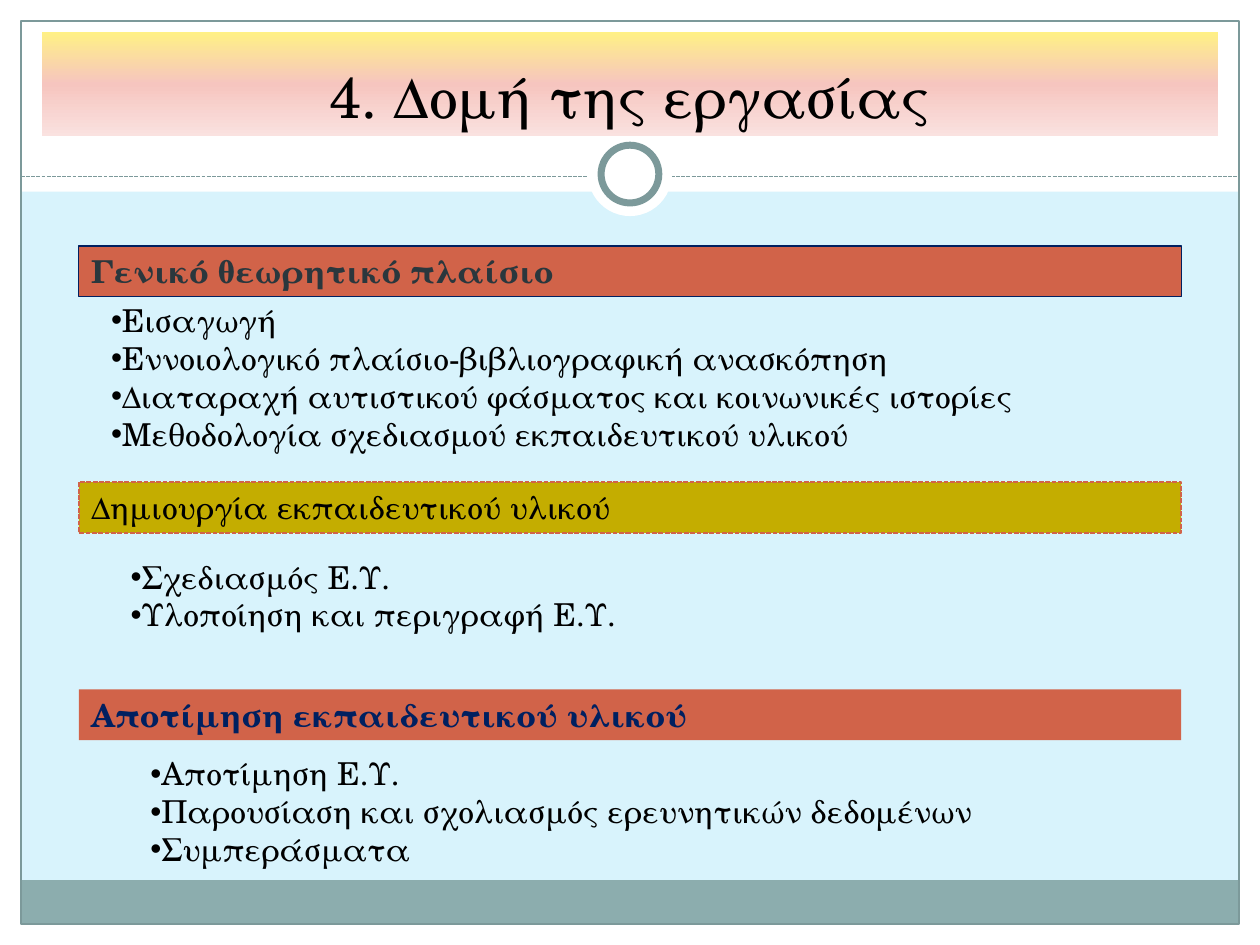
import copy
from dataclasses import dataclass
from typing import Any, NamedTuple, Optional

import pptx
import pptx.dml.color
import pptx.enum.dml
import pptx.enum.shapes
import pptx.enum.text
import pptx.oxml
import pptx.oxml.ns
import pptx.util

Pt = pptx.util.Pt
SHAPES = pptx.enum.shapes.MSO_SHAPE
ANCHOR = pptx.enum.text.MSO_ANCHOR
ALIGN = pptx.enum.text.PP_ALIGN
FIT = pptx.enum.text.MSO_AUTO_SIZE
DASH = pptx.enum.dml.MSO_LINE.SQUARE_DOT


@dataclass(frozen=True)
class Theme:
    font: str = "TeX Gyre Schola"
    title_size: float = 33
    text_size: float = 18
    background: str = "D8F3FC"
    white: str = "FFFFFF"
    black: str = "000000"
    footer: str = "8CADAE"
    trim: str = "7C999A"
    rust: str = "D16349"
    gold: str = "C4AD00"
    navy: str = "002060"
    slate: str = "2A373D"
    green: str = "648C61"
    gradient: tuple = ((0, "FFF185"), (0.5, "F6C5BF"), (1, "FAE2E0"))


THEME = Theme()


class Box(NamedTuple):
    left: float
    top: float
    width: float
    height: float


class Stroke(NamedTuple):
    color: str
    width: float
    dash: Any = None
    alpha: int = 100


class Panel(NamedTuple):
    box: Box
    fill: Optional[str] = None
    stroke: Optional[Stroke] = None
    kind: Any = SHAPES.RECTANGLE


class Section(NamedTuple):
    heading: str
    top: float
    fill: str
    color: str
    bold: bool
    stroke: Optional[Stroke]
    outline: Optional[Stroke]
    list_box: Box
    items: tuple


PANELS = (
    Panel(Box(0, 528, 720, 12), THEME.white),
    Panel(Box(0, 0, 720, 109.5), THEME.white),
    Panel(Box(0, 0, 12, 540), THEME.white),
    Panel(Box(708, 0, 12, 540), THEME.white),
    Panel(Box(12, 503, 696, 25), THEME.footer),
    Panel(Box(12, 12, 696, 516), None, Stroke(THEME.trim, 0.75)),
)
RINGS = (
    Panel(Box(336, 75.5, 48, 48), THEME.white, None, SHAPES.OVAL),
    Panel(Box(343.5, 83, 33, 33), THEME.white, Stroke(THEME.trim, 4), SHAPES.OVAL),
)
SECTIONS = (
    Section("Γενικό θεωρητικό πλαίσιο", 140.5, THEME.rust, THEME.slate, True,
            Stroke(THEME.navy, 0.75), Stroke(THEME.green, 0.07, alpha=55),
            Box(56.25, 168.5, 585, 94),
            ("Εισαγωγή",
             "Εννοιολογικό πλαίσιο-βιβλιογραφική ανασκόπηση",
             "Διαταραχή αυτιστικού φάσματος και κοινωνικές ιστορίες",
             "Μεθοδολογία σχεδιασμού εκπαιδευτικού υλικού")),
    Section("Δημιουργία εκπαιδευτικού υλικού", 275.5, THEME.gold, THEME.black, False,
            Stroke(THEME.rust, 0.9, DASH), Stroke(THEME.rust, 0.8),
            Box(67.5, 315, 574, 51),
            ("Σχεδιασμός Ε.Υ.", "Υλοποίηση και περιγραφή Ε.Υ.")),
    Section("Αποτίμηση εκπαιδευτικού υλικού", 394, THEME.rust, THEME.navy, True,
            None, None,
            Box(78.75, 427.5, 580, 73),
            ("Αποτίμηση Ε.Υ.",
             "Παρουσίαση και σχολιασμός ερευνητικών δεδομένων",
             "Συμπεράσματα")),
)


def rgb(value: str) -> pptx.dml.color.RGBColor:
    return pptx.dml.color.RGBColor.from_string(value)


def apply_stroke(line: Any, stroke: Optional[Stroke]) -> None:
    if stroke is None:
        line.fill.background()
        return
    line.color.rgb = rgb(stroke.color)
    line.width = Pt(stroke.width)
    if stroke.dash is not None:
        line.dash_style = stroke.dash


def draw_panel(page: Any, panel: Panel) -> Any:
    shape = page.shapes.add_shape(panel.kind, *map(Pt, panel.box))
    shape.shadow.inherit = False
    if panel.fill is None:
        shape.fill.background()
    else:
        shape.fill.solid()
        shape.fill.fore_color.rgb = rgb(panel.fill)
    apply_stroke(shape.line, panel.stroke)
    return shape


def draw_rule(page: Any, left: float, right: float, top: float, stroke: Stroke) -> None:
    rule = page.shapes.add_connector(
        pptx.enum.shapes.MSO_CONNECTOR.STRAIGHT, Pt(left), Pt(top), Pt(right), Pt(top))
    apply_stroke(rule.line, stroke)
    rule.element.spPr.append(pptx.oxml.parse_xml(
        f'<a:effectLst {pptx.oxml.ns.nsdecls("a")}/>'))


def place_on_top(shape: Any, box: Box) -> None:
    shape.left, shape.top, shape.width, shape.height = map(Pt, box)
    shape.element.getparent().append(shape.element)


def add_bullet(para: Any) -> None:
    properties = para._p.get_or_add_pPr()
    properties.set("marL", "0")
    properties.set("indent", "0")
    properties.append(pptx.oxml.parse_xml(
        f'<a:buChar {pptx.oxml.ns.nsdecls("a")} char="•"/>'))


def outline_text(span: Any, stroke: Stroke) -> None:
    span._r.get_or_add_rPr().insert(0, pptx.oxml.parse_xml(
        f'<a:ln {pptx.oxml.ns.nsdecls("a")} w="{int(Pt(stroke.width))}"><a:solidFill>'
        f'<a:srgbClr val="{stroke.color}"><a:alpha val="{stroke.alpha * 1000}"/></a:srgbClr>'
        '</a:solidFill><a:prstDash val="solid"/></a:ln>'))


def write_text(shape: Any, *lines: str, size: float = THEME.text_size,
               color: str = THEME.black, bold: bool = False, align: Any = ALIGN.LEFT,
               anchor: Any = ANCHOR.TOP, fit: Any = FIT.SHAPE_TO_FIT_TEXT,
               bullets: bool = False, outline: Optional[Stroke] = None) -> None:
    frame = shape.text_frame
    frame.word_wrap = True
    frame.auto_size = fit
    frame.vertical_anchor = anchor
    for index, line in enumerate(lines):
        para = frame.add_paragraph() if index else frame.paragraphs[0]
        para.alignment = align
        para.line_spacing = 1.0
        para.space_before = para.space_after = Pt(0)
        if bullets:
            add_bullet(para)
        span = para.add_run()
        span.text = line
        span.font.name = THEME.font
        span.font.size = Pt(size)
        span.font.bold = bold
        span.font.color.rgb = rgb(color)
        if outline is not None:
            outline_text(span, outline)


def fill_gradient(shape: Any) -> None:
    shape.fill.gradient()
    shape.fill.gradient_angle = 270
    stop_list = shape.element.spPr.find(".//" + pptx.oxml.ns.qn("a:gsLst"))
    stop_list.insert(1, copy.deepcopy(stop_list[0]))
    for stop, (position, color) in zip(shape.fill.gradient_stops, THEME.gradient):
        stop.position = position
        stop.color.rgb = rgb(color)


def main() -> None:
    deck = pptx.Presentation()
    deck.slide_width, deck.slide_height = Pt(720), Pt(540)
    page = deck.slides.add_slide(deck.slide_layouts.get_by_name("Comparison"))
    page.background.fill.solid()
    page.background.fill.fore_color.rgb = rgb(THEME.background)
    title, *bodies = list(page.placeholders)

    for panel in PANELS:
        draw_panel(page, panel)
    draw_rule(page, 12, 708, 100.75, Stroke(THEME.trim, 0.75, DASH))
    for ring in RINGS:
        draw_panel(page, ring)

    place_on_top(title, Box(24, 18, 672, 60))
    fill_gradient(title)
    write_text(title, "4. Δομή της εργασίας", size=THEME.title_size,
               align=ALIGN.CENTER, anchor=ANCHOR.BOTTOM, fit=FIT.NONE)

    for section, body in zip(SECTIONS, bodies):
        bar = draw_panel(page, Panel(Box(45, section.top, 630, 29), section.fill, section.stroke))
        write_text(bar, section.heading, color=section.color, bold=section.bold,
                   outline=section.outline)
        place_on_top(body, section.list_box)
        write_text(body, *section.items, bullets=True)
    for spare in bodies[len(SECTIONS):]:
        spare.element.getparent().remove(spare.element)

    deck.save("out.pptx")


if __name__ == "__main__":
    main()
